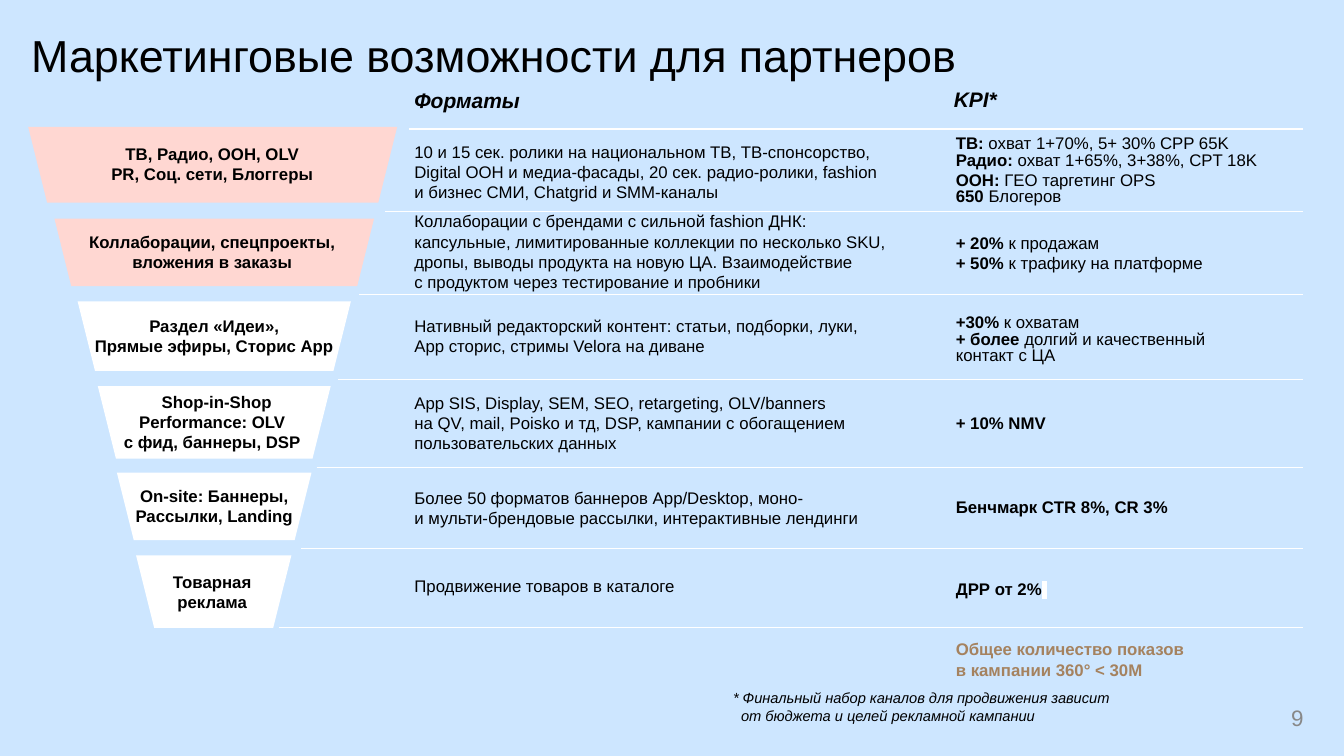
from pptx import Presentation
from pptx.util import Inches, Pt
from pptx.dml.color import RGBColor
from pptx.enum.shapes import MSO_SHAPE, MSO_CONNECTOR
from pptx.enum.text import PP_ALIGN, MSO_ANCHOR
from pptx.oxml import parse_xml
from pptx.oxml.ns import qn, nsdecls
from lxml import etree

PINK, WHITE, TAN = "FFD7D2", "FFFFFF", "A5825F"
LEFT, CENTER, RIGHT = PP_ALIGN.LEFT, PP_ALIGN.CENTER, PP_ALIGN.RIGHT


def rgb(value):
    return RGBColor.from_string(value)


def write(sp, paras, size=12, color="000000", bold=None, italic=None,
          align=LEFT, inset=0.13, spacing=()):
    """Fill a text shape; parts between | marks are bold, \\n breaks the line."""
    tf = sp.text_frame
    tf.word_wrap = True
    tf.vertical_anchor = MSO_ANCHOR.MIDDLE
    tf.margin_left = tf.margin_right = Inches(inset)
    tf.margin_top = tf.margin_bottom = Inches(inset)
    for i, text in enumerate(paras):
        p = tf.paragraphs[0] if i == 0 else tf.add_paragraph()
        p.alignment = align
        if i in spacing:
            p.line_spacing = 0.8
        for j, part in enumerate(text.split("|")):
            for k, line in enumerate(part.split("\n")):
                if k:
                    p.add_line_break()
                if line:
                    r = p.add_run()
                    r.text = line
                    if j % 2:
                        r.font.bold = True
        f = p.font
        f.name, f.size, f.bold, f.italic = "Arial", Pt(size), bold, italic
        f.color.rgb = rgb(color)
    return tf


prs = Presentation()
prs.slide_width, prs.slide_height = Inches(13.33), Inches(7.5)
s = prs.slides.add_slide(prs.slide_layouts[5])
s.background.fill.solid()
s.background.fill.fore_color.rgb = rgb("CDE6FF")
shapes = s.shapes

# Title
title = shapes.title
title.left, title.top = Inches(0.31), Inches(0.25)
title.width, title.height = Inches(12.76), Inches(0.58)
write(title, ["Маркетинговые возможности для партнеров"], size=32, inset=0)

# Funnel rows: trapezoid box, fill, label box, label,
# formats top and height, formats, KPI top and height, KPI, tight KPI lines
rows = [
    ((0.28, 1.26, 3.66, 0.75), PINK, (0.71, 1.29, 2.79, 0.67),
     ["ТВ, Радио, OOH, OLV", "PR, Соц. сети, Блоггеры"],
     (1.44, 0.53, 4.91),
     ["10 и 15 сек. ролики на национальном ТВ, ТВ-спонсорство, Digital OOH и "
      "медиа-фасады, 20 сек. радио-ролики, fashion и бизнес СМИ, Chatgrid и SMM-каналы"],
     (1.22, 0.96),
     ["|ТВ: |охват 1+70%, 5+ 30% CPP 65K", "|Радио: |охват 1+65%, 3+38%, CPT 18K",
      "|OOH:| ГЕО таргетинг OPS", "|650 |Блогеров"], (0, 1, 3)),
    ((0.54, 2.17, 3.17, 0.67), PINK, (0.71, 2.16, 2.79, 0.67),
     ["Коллаборации, спецпроекты,", "вложения в заказы"],
     (2.16, 0.67, 5.35),
     ["Коллаборации с брендами с сильной fashion ДНК:",
      "капсульные, лимитированные коллекции по несколько SKU, дропы, "
      "выводы продукта на новую ЦА. Взаимодействие",
      "с продуктом через тестирование и пробники"],
     (2.26, 0.49), ["|+ 20%| к продажам\n|+ 50% |к трафику на платформе"], ()),
    ((0.77, 2.99, 2.71, 0.69), WHITE, (0.73, 3.0, 2.79, 0.67),
     ["Раздел «Идеи»,\nПрямые эфиры, Сторис App"],
     (3.09, 0.49, 5.42),
     ["Нативный редакторский контент: статьи, подборки, луки,\n"
      "App сторис, стримы Velora на диване"],
     (3.0, 0.75),
     ["|+30%| к охватам", "|+ более| долгий и качественный\nконтакт с ЦА"], (0, 1)),
    ((0.97, 3.83, 2.31, 0.72), WHITE, (1.06, 3.75, 2.09, 0.87),
     ["Shop-in-Shop", "Performance: OLV", "с фид, баннеры, DSP"],
     (3.95, 0.49, 5.42),
     ["App SIS, Display, SEM, SEO, retargeting, OLV/banners",
      "на QV, mail, Poisko и тд, DSP, кампании с обогащением пользовательских данных"],
     (3.95, 0.49), ["|+ 10% NMV|"], ()),
    ((1.16, 4.69, 1.93, 0.67), WHITE, (1.15, 4.68, 1.95, 0.67),
     ["On-site: Баннеры, Рассылки, Landing"],
     (4.79, 0.49, 5.42),
     ["Более 50 форматов баннеров App/Desktop, моно-",
      "и мульти-брендовые рассылки, интерактивные лендинги"],
     (4.78, 0.49), ["|Бенчмарк CTR 8%, CR 3%|"], ()),
    ((1.35, 5.51, 1.54, 0.72), WHITE, (1.53, 5.54, 1.15, 0.67),
     ["Товарная реклама"],
     (5.41, 0.81, 5.42), ["Продвижение товаров в каталоге"],
     (5.6, 0.49), ["|ДРР от 2%|"], ()),
]
for trap, fill, label_box, label, fmt_box, formats, kpi_box, kpi, tight in rows:
    sp = shapes.add_shape(MSO_SHAPE.TRAPEZOID, *map(Inches, trap))
    sp.adjustments[0] = 0.25
    sp._element.spPr.find(qn("a:xfrm")).set("flipV", "1")
    sp.shadow.inherit = False
    sp.fill.solid()
    sp.fill.fore_color.rgb = rgb(fill)
    sp.line.fill.background()

    label_sp = shapes.add_textbox(*map(Inches, label_box))
    label_tf = write(label_sp, label, bold=True, align=CENTER)
    if label[0] == "Shop-in-Shop":
        label_tf.paragraphs[0]._p.get_or_add_pPr().set("marL", str(Inches(0.09)))

    top, height, width = fmt_box
    write(shapes.add_textbox(Inches(3.98), Inches(top), Inches(width), Inches(height)),
          formats)
    top, height = kpi_box
    kpi_tf = write(shapes.add_textbox(Inches(9.35), Inches(top), Inches(3.65), Inches(height)),
                   kpi, spacing=tight)

# White marker after the last KPI
r = kpi_tf.paragraphs[0].add_run()
r.text = " "
r.font.bold = True
r._r.get_or_add_rPr().append(parse_xml(
    f'<a:highlight {nsdecls("a")}><a:srgbClr val="{WHITE}"/></a:highlight>'))

# Row separators
for x, y in [(4.06, 1.28), (3.82, 2.1), (3.56, 2.92), (3.35, 3.77),
             (3.14, 4.64), (2.99, 5.44), (2.77, 6.23)]:
    line = shapes.add_connector(MSO_CONNECTOR.STRAIGHT, Inches(x), Inches(y),
                                Inches(12.92), Inches(y))
    line.line.color.rgb = rgb(WHITE)
    line.line.width = Pt(0.75)
    etree.SubElement(line._element.spPr, qn("a:effectLst"))

# Column headings
for x, y, width, heading in [(3.98, 0.75, 1.74, "Форматы"), (9.33, 0.74, 1.8, "KPI*")]:
    write(shapes.add_textbox(Inches(x), Inches(y), Inches(width), Inches(0.49)),
          [heading], size=15, bold=True, italic=True)

# Total, footnote and page number
write(shapes.add_textbox(Inches(9.48), Inches(6.33), Inches(2.48), Inches(0.42)),
      ["Общее количество показов\nв кампании 360° < 30M"], color=TAN, bold=True, inset=0)
note_tf = write(shapes.add_textbox(Inches(7.27), Inches(6.84), Inches(5.49), Inches(0.34)),
                ["* Финальный набор каналов для продвижения зависит",
                 "от бюджета и целей рекламной кампании"], size=10.5, italic=True, inset=0)
note_tf.paragraphs[1]._p.get_or_add_pPr().set("marL", str(Inches(0.08)))
write(shapes.add_textbox(Inches(10.06), Inches(6.92), Inches(3), Inches(0.4)),
      ["9"], size=16, color="888888", align=RIGHT)

prs.save("out.pptx")
